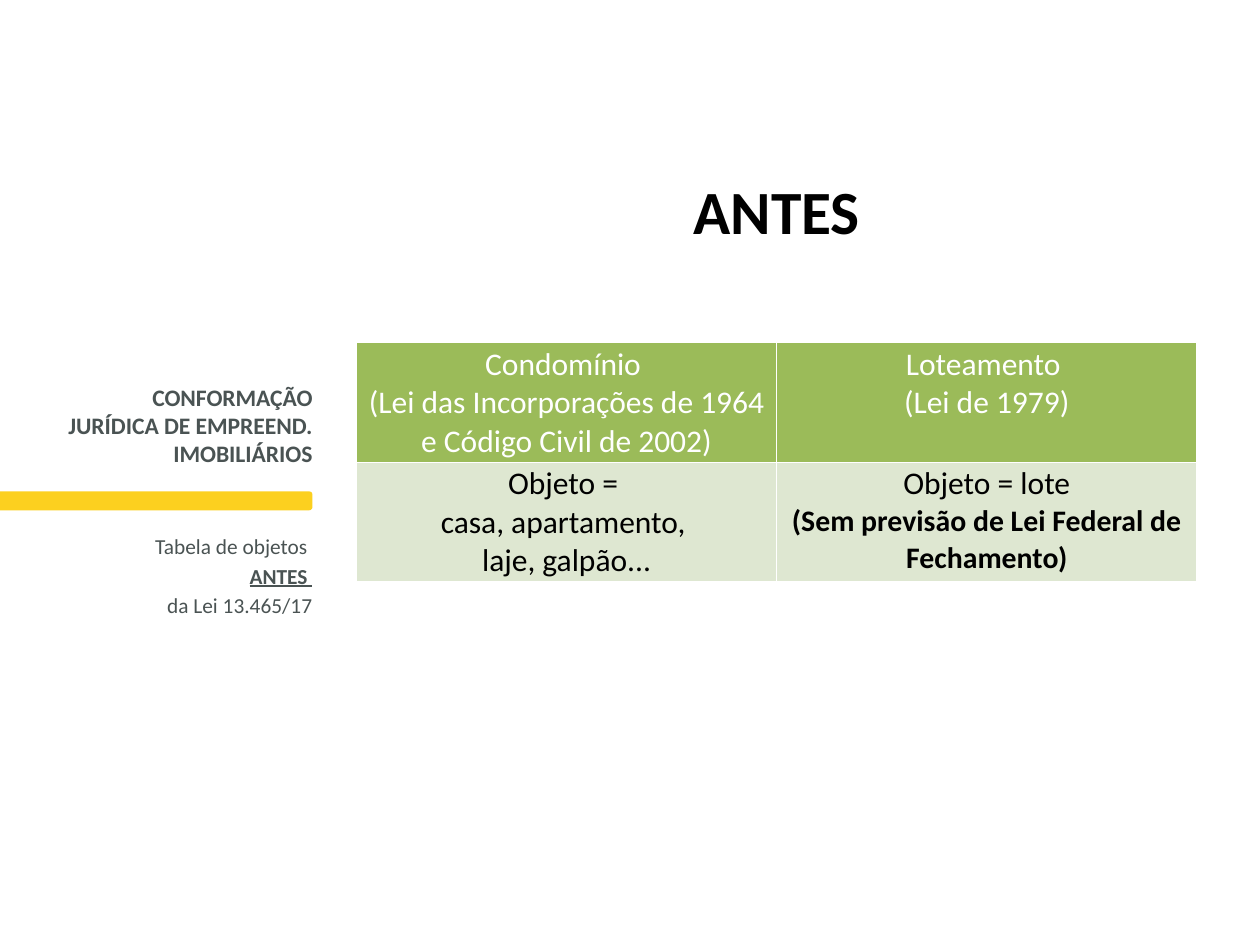
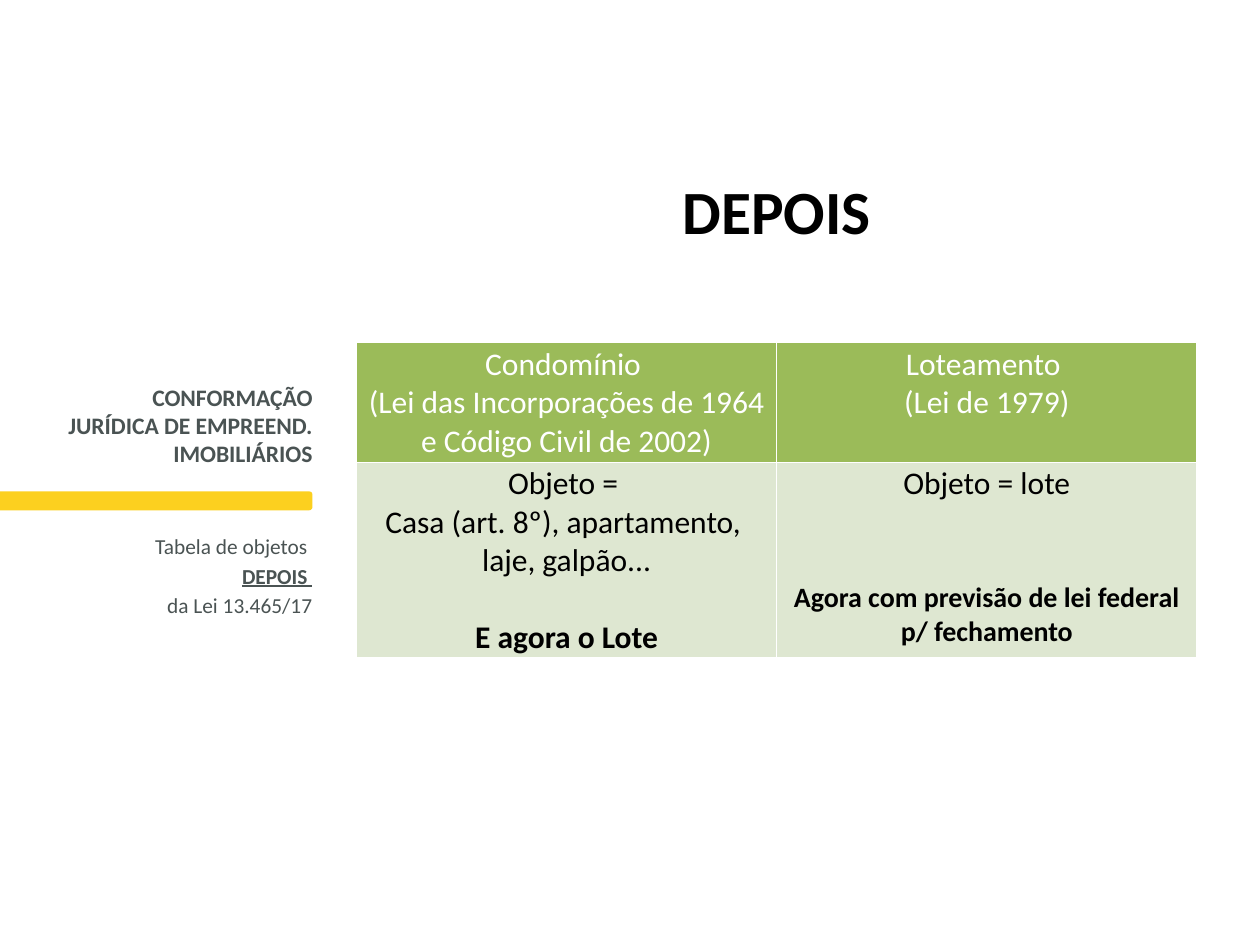
from dataclasses import dataclass

from lxml.etree import SubElement
from pptx import Presentation
from pptx.dml.color import RGBColor
from pptx.enum.shapes import MSO_SHAPE as Shape
from pptx.enum.text import MSO_ANCHOR as Anchor, MSO_AUTO_SIZE as Fit, PP_ALIGN as Align
from pptx.oxml.ns import qn
from pptx.util import Inches, Pt

FONT = "Calibri"
WHITE, BLACK, GRAY = "FFFFFF", "000000", "4A5353"
YELLOW, GREEN, PALE = "FCD01F", "9BBB59", "DEE7D1"
LINE = 22  # height in points of one line of table text


@dataclass
class Para:
    text: str
    size: float = 18
    bold: bool = False
    under: bool = False
    before: float = 0


@dataclass
class Page:
    title: str
    height: float
    cells: list[list[Para]]


HEADS = [
    [Para("Condomínio "), Para("(Lei das Incorporações de 1964 e Código Civil de 2002)")],
    [Para("Loteamento "), Para("(Lei de 1979)")],
]
PAGES = [
    Page("ANTES", 0.95, [
        [Para("Objeto = "), Para("casa, apartamento, "), Para("laje, galpão...")],
        [Para("Objeto = lote"),
         Para("(Sem previsão de Lei Federal de Fechamento)", 17, True)],
    ]),
    Page("DEPOIS", 1.55, [
        [Para("Objeto = "), Para("Casa (art. 8º), apartamento, "), Para("laje, galpão..."),
         Para("E agora o Lote", bold=True, before=LINE)],
        [Para("Objeto = lote"),
         Para("Agora com previsão de lei federal p/ fechamento", 16, True, before=2 * LINE)],
    ]),
]


def color(code: str) -> RGBColor:
    return RGBColor.from_string(code)


def paint(item, code: str) -> None:
    item.fill.solid()
    item.fill.fore_color.rgb = color(code)


def write(frame, paras: list[Para], code: str, align) -> None:
    for i, para in enumerate(paras):
        line = frame.add_paragraph() if i else frame.paragraphs[0]
        line.alignment = align
        line.space_before = Pt(para.before)
        run = line.add_run()
        run.text = para.text
        font = run.font
        font.name, font.size = FONT, Pt(para.size)
        font.bold, font.underline = para.bold, para.under
        font.color.rgb = color(code)


def add_title(slide, text: str) -> None:
    title = slide.shapes.title
    title.left, title.top = Inches(4.51), Inches(1.32)
    title.width, title.height = Inches(3.31), Inches(0.69)
    frame = title.text_frame
    frame.auto_size = Fit.NONE
    frame.vertical_anchor = Anchor.MIDDLE
    write(frame, [Para(text, 35.1, True)], BLACK, Align.CENTER)


def add_note(slide, top: float, height: float, paras: list[Para], anchor) -> None:
    """Add one right-aligned text of the side column."""
    box = slide.shapes.add_textbox(Inches(0.5), Inches(top), Inches(1.98), Inches(height))
    frame = box.text_frame
    frame.word_wrap = True
    frame.vertical_anchor = anchor
    frame.margin_left = frame.margin_right = frame.margin_top = frame.margin_bottom = 0
    write(frame, paras, GRAY, Align.RIGHT)


def add_side(slide, when: str) -> None:
    bar = slide.shapes.add_shape(Shape.ROUNDED_RECTANGLE, Inches(-0.2), Inches(3.9),
                                 Inches(2.68), Inches(0.15))
    bar.shadow.inherit = False
    paint(bar, YELLOW)
    bar.line.fill.background()
    add_note(slide, 3.03, 0.68,
             [Para("CONFORMAÇÃO JURÍDICA DE EMPREEND. IMOBILIÁRIOS", 13.5, True)],
             Anchor.BOTTOM)
    add_note(slide, 4.23, 1.83, [
        Para("Tabela de objetos ", 12.2),
        Para(f"{when} ", 12.2, True, True, 2.4),
        Para("da Lei 13.465/17", 12.2, before=2.4),
    ], Anchor.TOP)


def edge(cell) -> None:
    """Draw a thin white border on all four sides."""
    props = cell._tc.get_or_add_tcPr()
    for side in "LRTB":
        line = SubElement(props, qn(f"a:ln{side}"), w=str(Pt(1)))
        fill = SubElement(line, qn("a:solidFill"))
        SubElement(fill, qn("a:srgbClr"), val=WHITE)


def add_grid(slide, page: Page) -> None:
    heights = [0.95, page.height]
    table = slide.shapes.add_table(2, 2, Inches(2.83), Inches(2.72), Inches(6.67),
                                   Inches(sum(heights))).table
    table.horz_banding = False
    looks = [(HEADS, GREEN, WHITE), (page.cells, PALE, BLACK)]
    for r, (texts, back, ink) in enumerate(looks):
        table.rows[r].height = Inches(heights[r])
        for c, paras in enumerate(texts):
            cell = table.cell(r, c)
            cell.margin_left = cell.margin_right = Inches(0.05)
            cell.margin_top = cell.margin_bottom = Inches(0.02)
            edge(cell)
            paint(cell, back)
            write(cell.text_frame, paras, ink, Align.CENTER)


def main() -> None:
    deck = Presentation()
    deck.slide_width, deck.slide_height = Inches(10), Inches(7.5)
    layout = deck.slide_layouts.get_by_name("Title Only")
    for page in PAGES:
        slide = deck.slides.add_slide(layout)
        add_side(slide, page.title)
        add_grid(slide, page)
        add_title(slide, page.title)
    deck.save("out.pptx")


if __name__ == "__main__":
    main()
